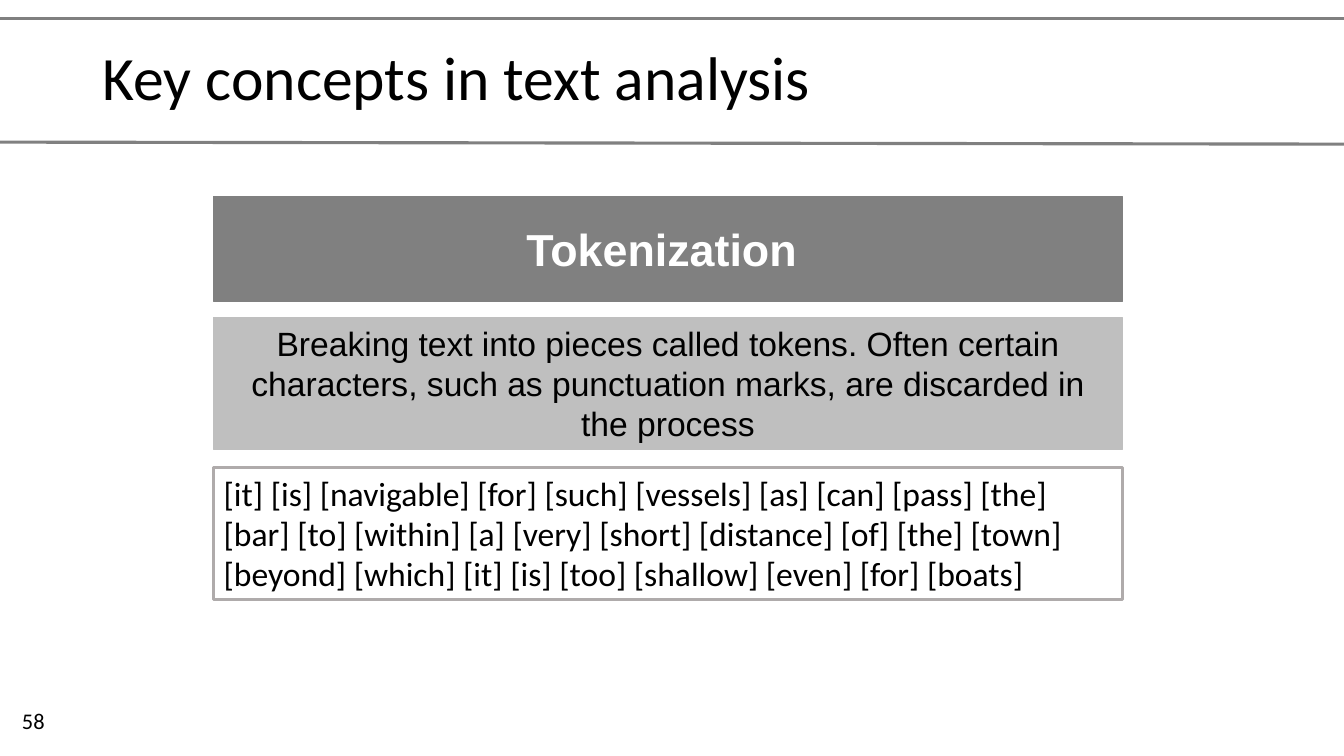
"""Build the slide that explains tokenization in text analysis."""
from lxml import etree
from pptx import Presentation
from pptx.dml.color import RGBColor
from pptx.enum.shapes import MSO_CONNECTOR, MSO_SHAPE
from pptx.enum.text import MSO_ANCHOR, PP_ALIGN
from pptx.oxml.ns import qn
from pptx.util import Inches, Pt

STRAIGHT = MSO_CONNECTOR.STRAIGHT
RECTANGLE = MSO_SHAPE.RECTANGLE
TOP, MIDDLE = MSO_ANCHOR.TOP, MSO_ANCHOR.MIDDLE
LEFT, CENTER = PP_ALIGN.LEFT, PP_ALIGN.CENTER

COLORS = {
    "black": "000000",
    "white": "FFFFFF",
    "dark": "808080",
    "light": "BFBFBF",
    "border": "AFABAB",
}


def color(name):
    return RGBColor.from_string(COLORS[name])


def write(shape, text, size, font="Calibri", ink="black", bold=False,
          align=LEFT, anchor=TOP, spacing=None):
    frame = shape.text_frame
    frame.word_wrap = True
    frame.vertical_anchor = anchor
    para = frame.paragraphs[0]
    para.alignment = align
    para.line_spacing = spacing
    span = para.add_run()
    span.text = text
    span.font.size = Pt(size)
    span.font.name = font
    span.font.bold = bold
    span.font.color.rgb = color(ink)


deck = Presentation()
deck.slide_width = Inches(13.33)
deck.slide_height = Inches(7.5)
page = deck.slides.add_slide(deck.slide_layouts[6])

for start, end in [(0.18, 0.18), (1.41, 1.43)]:
    rule = page.shapes.add_connector(
        STRAIGHT, Inches(0), Inches(start), Inches(13.33), Inches(end))
    rule.line.color.rgb = color("dark")
    rule.line.width = Pt(2.25)
    etree.SubElement(rule._element.spPr, qn("a:effectLst"))

title = page.shapes.add_textbox(Inches(0.92), Inches(0.18), Inches(11.5), Inches(1.24))
write(title, "Key concepts in text analysis", 44, anchor=MIDDLE, spacing=0.9)

heading = dict(size=32, font="Arial", ink="white", bold=True, align=CENTER, anchor=MIDDLE)
definition = dict(size=24, font="Arial", align=CENTER)
example = dict(size=24)
panels = [
    (1.95, 1.04, "dark", "dark", 0.5, "Tokenization ", heading),
    (3.15, 1.31, "light", "light", 0.75,
     "Breaking text into pieces called tokens. Often certain characters, "
     "such as punctuation marks, are discarded in the process", definition),
    (4.64, 1.31, None, "border", 2.25,
     "[it] [is] [navigable] [for] [such] [vessels] [as] [can] [pass] [the] "
     "[bar] [to] [within] [a] [very] [short] [distance] [of] [the] [town] "
     "[beyond] [which] [it] [is] [too] [shallow] [even] [for] [boats]", example),
]
for top, height, fill, outline, weight, text, style in panels:
    panel = page.shapes.add_shape(
        RECTANGLE, Inches(2.12), Inches(top), Inches(9.01), Inches(height))
    panel.shadow.inherit = False
    if fill:
        panel.fill.solid()
        panel.fill.fore_color.rgb = color(fill)
    else:
        panel.fill.background()
    panel.line.color.rgb = color(outline)
    panel.line.width = Pt(weight)
    write(panel, text, **style)

number = page.shapes.add_textbox(Inches(0.12), Inches(6.95), Inches(3), Inches(0.4))
write(number, "58", 16, anchor=MIDDLE)

deck.save("out.pptx")
